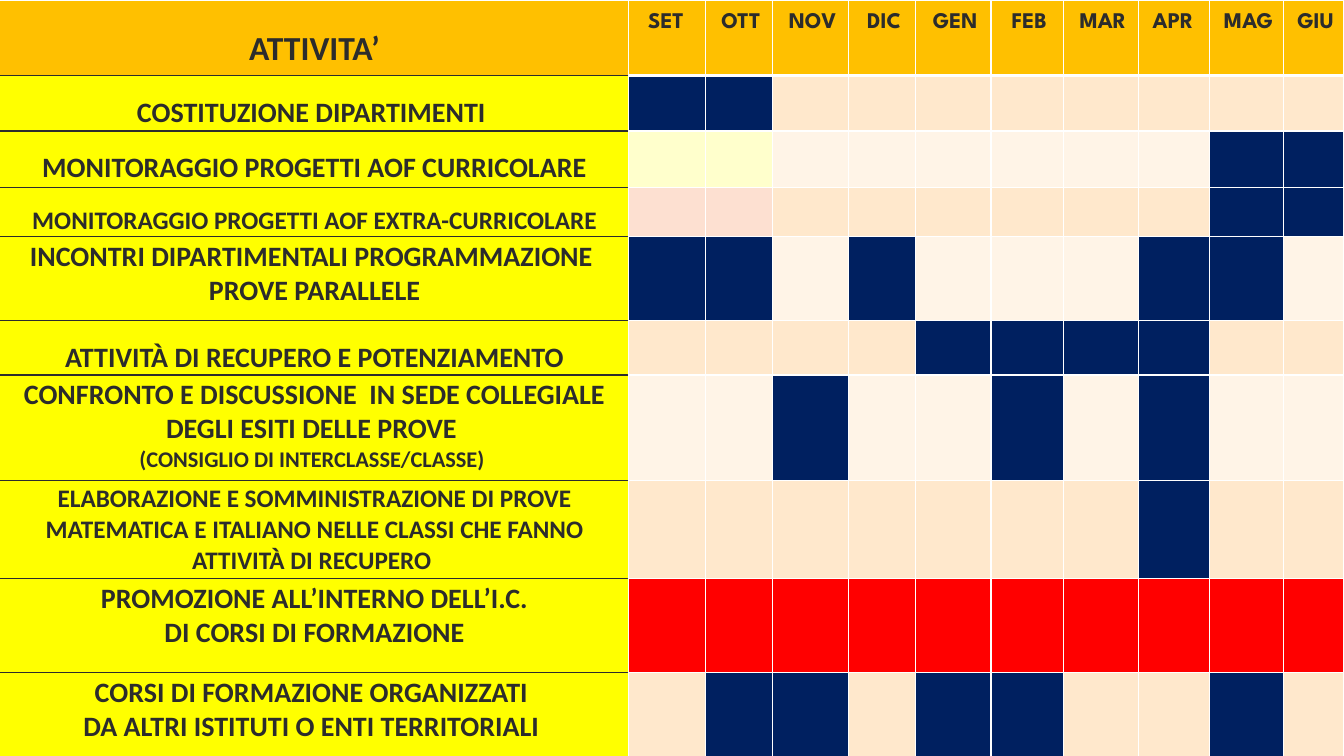
from lxml import etree
from pptx import Presentation
from pptx import util as u
from pptx.dml.color import RGBColor
from pptx.enum import text
from pptx.oxml.ns import qn

# Content: each activity has its lines (text, size), line spacing and month codes
MONTHS = ["SET ", " OTT ", " NOV ", " DIC ", " GEN ", " FEB ", " MAR ", "APR ", " MAG ", "GIU"]
ACTIVITIES = [
    ([("COSTITUZIONE DIPARTIMENTI ", 20)], 1.5, "NN........"),
    ([("MONITORAGGIO PROGETTI AOF CURRICOLARE", 20)], 1.5, "CC......NN"),
    ([("MONITORAGGIO PROGETTI AOF EXTRA-CURRICOLARE", 18)], 1.5, "PP......NN"),
    ([("INCONTRI DIPARTIMENTALI PROGRAMMAZIONE ", 20), ("PROVE PARALLELE", 20)], 1, "NN.N...NN."),
    ([("ATTIVITÀ DI RECUPERO E POTENZIAMENTO", 20)], 1.5, "....NNNN.."),
    ([("CONFRONTO E DISCUSSIONE  IN SEDE COLLEGIALE DEGLI ESITI DELLE PROVE ", 20),
      ("(CONSIGLIO DI INTERCLASSE/CLASSE) ", 16)], 1, "..N..N.N.."),
    ([("ELABORAZIONE E SOMMINISTRAZIONE DI PROVE MATEMATICA E ITALIANO NELLE CLASSI "
       "CHE FANNO ATTIVITÀ DI RECUPERO ", 18)], 1, ".......N.."),
    ([("PROMOZIONE ALL’INTERNO DELL’I.C.", 20), (" DI CORSI DI FORMAZIONE ", 20)], 1, "RRRRRRRRRR"),
    ([("CORSI DI FORMAZIONE ORGANIZZATI ", 20),
      ("DA ALTRI ISTITUTI O ENTI TERRITORIALI ", 20)], 1, ".NN.NN..N."),
]
FILLS = {"N": "002060", "R": "FF0000", "C": "FFFFCC", "P": "FDE0D1"}
BANDS = ["FFF4E7", "FFE8CC"]
INK, WHITE, AMBER, YELLOW = "2C2C2C", "FFFFFF", "FFC000", "FFFF00"

# Lengths in px, 100 to the inch
PX = 9144
COLS = [626, 77, 66, 76, 66, 75, 72, 74, 71, 73, 60]
ROWS = [75, 55, 56, 49, 83, 53, 105, 97, 93, 87]


def rgb(value):
    return RGBColor.from_string(value)


def style_cell(cell, fill, top=(WHITE, 1), bottom=(WHITE, 1)):
    """Give a cell its four borders, then its fill."""
    tcPr = cell._tc.get_or_add_tcPr()
    sides = {"a:lnL": (WHITE, 1), "a:lnR": (WHITE, 1), "a:lnT": top, "a:lnB": bottom}
    for tag, (color, width) in sides.items():
        ln = etree.SubElement(tcPr, qn(tag), w=str(u.Pt(width)))
        solid = etree.SubElement(ln, qn("a:solidFill"))
        etree.SubElement(solid, qn("a:srgbClr"), val=color)
    cell.fill.solid()
    cell.fill.fore_color.rgb = rgb(fill)


def write(cell, lines, font="Calibri", spacing=1.5, anchor=text.MSO_ANCHOR.TOP):
    cell.margin_left, cell.margin_top = 7 * PX, 3 * PX
    cell.margin_right, cell.margin_bottom = 3 * PX, 0
    cell.vertical_anchor = anchor
    tf = cell.text_frame
    for i, (line, size) in enumerate(lines):
        p = tf.add_paragraph() if i else tf.paragraphs[0]
        p.alignment = text.PP_ALIGN.CENTER
        p.line_spacing = float(spacing)
        r = p.add_run()
        r.text = line
        r.font.name, r.font.size, r.font.bold = font, u.Pt(size), True
        r.font.color.rgb = rgb(INK)


prs = Presentation()
prs.slide_width, prs.slide_height = 1333 * PX, 750 * PX
s = prs.slides.add_slide(prs.slide_layouts[6])
s.background.fill.solid()
s.background.fill.fore_color.rgb = rgb("F56617")

# Table grid
table = s.shapes.add_table(len(ROWS), len(COLS), -3 * PX, 0, sum(COLS) * PX, sum(ROWS) * PX).table
for column, width in zip(table.columns, COLS):
    column.width = width * PX
for row, height in zip(table.rows, ROWS):
    row.height = height * PX

# Header row
style_cell(table.cell(0, 0), AMBER, bottom=(INK, 1))
write(table.cell(0, 0), [("ATTIVITA’", 24)], anchor=text.MSO_ANCHOR.MIDDLE)
for col, month in enumerate(MONTHS, 1):
    style_cell(table.cell(0, col), AMBER, bottom=(WHITE, 3))
    write(table.cell(0, col), [(month, 16)], font="League Spartan")

# Activity rows
for row, (lines, spacing, codes) in enumerate(ACTIVITIES, 1):
    last = row == len(ACTIVITIES)
    style_cell(table.cell(row, 0), YELLOW, top=(INK, 1), bottom=(WHITE if last else INK, 1))
    write(table.cell(row, 0), lines, spacing=spacing)
    for col, code in enumerate(codes, 1):
        style_cell(table.cell(row, col), FILLS.get(code, BANDS[row % 2]),
                   top=(WHITE, 3 if row == 1 else 1))

prs.save("out.pptx")
